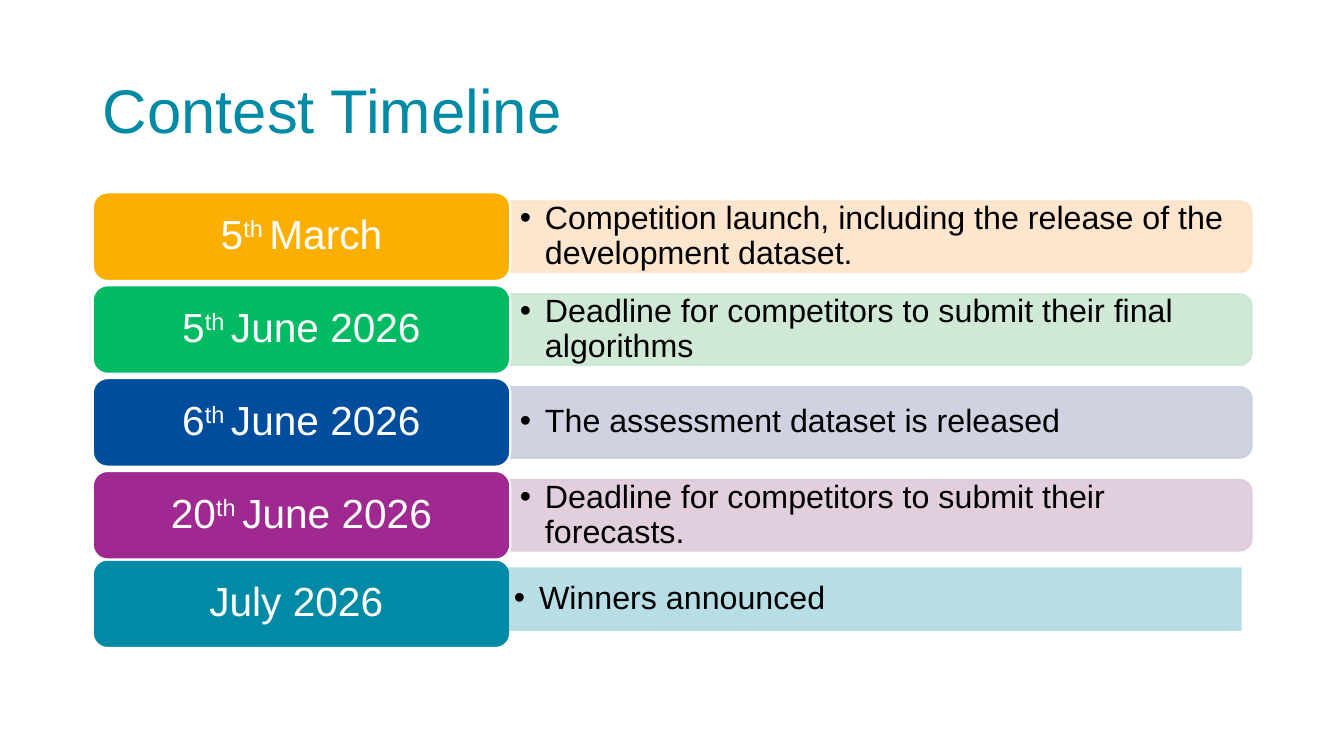
from lxml import etree
from pptx import Presentation
from pptx import util as u
from pptx.dml.color import RGBColor
from pptx.enum import shapes, text
from pptx.oxml.ns import qn

COLOURS = {
    "teal": "008AA5", "amber": "FCAF00", "green": "00BB61", "blue": "004D9E",
    "purple": "A02891", "pale amber": "FEE3C8", "pale green": "CAE7D2",
    "pale blue": "CACFDE", "pale purple": "DFCADB",
    "white": "FFFFFF", "black": "000000",
}
TITLE = "Contest Timeline"
MILESTONES = [
    (("5", "th ", "March"), "amber",
     "Competition launch, including the release of the development dataset."),
    (("5", "th ", "June 2026"), "green",
     "Deadline for competitors to submit their final algorithms"),
    (("6", "th ", "June 2026"), "blue", "The assessment dataset is released"),
    (("20", "th ", "June 2026"), "purple",
     "Deadline for competitors to submit their forecasts."),
]
FINAL_DATE, FINAL_EVENT = ("July 2026",), "Winners announced"

LEFT, TOP, PITCH = 2.34, 4.85, 2.34
DATE_WIDTH, DATE_HEIGHT = 10.52, 2.23
BAR_LEFT, BAR_WIDTH, BAR_HEIGHT = 12.85, 18.69, 1.78
EVENT_WIDTH, EVENT_HEIGHT = 18.59, 1.6
FINAL_TOP, FINAL_BAR_LEFT, FINAL_BAR_TOP = 14.1, 12.7, 14.3


def colour(name):
    return RGBColor.from_string(COLOURS[name])


def set_opacity(shape, percent):
    for element in shape._element.spPr.iter(qn("a:srgbClr")):
        etree.SubElement(element, qn("a:alpha")).set("val", str(percent * 1000))


def format_font(font, size, name):
    font.name, font.size, font.color.rgb = "Arial", u.Pt(size), colour(name)


def set_frame(frame, left, right, top):
    frame.word_wrap = True
    frame.auto_size = text.MSO_AUTO_SIZE.NONE
    frame.vertical_anchor = text.MSO_ANCHOR.MIDDLE
    frame.margin_left, frame.margin_right = u.Cm(left), u.Cm(right)
    frame.margin_top = frame.margin_bottom = u.Cm(top)


def add_block(slide, kind, box, fill, line=None):
    shape = slide.shapes.add_shape(kind, *map(u.Cm, box))
    shape.shadow.inherit = False
    shape.fill.solid()
    shape.fill.fore_color.rgb = colour(fill)
    if line:
        shape.line.color.rgb = colour(line)
        shape.line.width = u.Pt(1.5)
    else:
        shape.line.fill.background()
    return shape


def add_date(slide, top, parts, fill, margins=(0.43, 0.43)):
    box = LEFT, top, DATE_WIDTH, DATE_HEIGHT
    shape = add_block(slide, shapes.MSO_SHAPE.ROUNDED_RECTANGLE, box, fill, "white")
    set_frame(shape.text_frame, *margins, 0.26)
    paragraph = shape.text_frame.paragraphs[0]
    paragraph.alignment = text.PP_ALIGN.CENTER
    paragraph.line_spacing = 0.9
    for index, part in enumerate(parts):
        run = paragraph.add_run()
        run.text = part
        format_font(run.font, 29, "white")
        if index == 1:
            run._r.get_or_add_rPr().set("baseline", "30000")


def write_event(shape, event):
    set_frame(shape.text_frame, 0.25, 0.25, 0.13)
    shape.text_frame.text = event
    paragraph = shape.text_frame.paragraphs[0]
    paragraph.alignment = text.PP_ALIGN.LEFT
    paragraph.line_spacing = 0.9
    properties = paragraph._p.get_or_add_pPr()
    properties.set("marL", "228600")
    properties.set("indent", "-228600")
    etree.SubElement(properties, qn("a:buFont")).set("typeface", "Arial")
    etree.SubElement(properties, qn("a:buChar")).set("char", "•")
    format_font(paragraph.runs[0].font, 23, "black")


def add_bar(slide, middle, fill):
    centre = BAR_LEFT + BAR_WIDTH / 2
    box = centre - BAR_HEIGHT / 2, middle - BAR_WIDTH / 2, BAR_HEIGHT, BAR_WIDTH
    bar = add_block(slide, shapes.MSO_SHAPE.ROUND_2_SAME_RECTANGLE, box, fill, fill)
    bar.rotation = 90
    set_opacity(bar, 90)


def add_title(slide):
    title = slide.shapes.title
    title.left, title.top, title.width, title.height = map(
        u.Cm, (LEFT, 1.02, 29.21, 3.68))
    title.text_frame.text = TITLE
    set_frame(title.text_frame, 0.25, 0.25, 0.13)
    paragraph = title.text_frame.paragraphs[0]
    paragraph.alignment = text.PP_ALIGN.LEFT
    paragraph.line_spacing = 0.9
    format_font(paragraph.runs[0].font, 44, "teal")


def main():
    presentation = Presentation()
    presentation.slide_width, presentation.slide_height = u.Cm(33.87), u.Cm(19.05)
    slide = presentation.slides.add_slide(presentation.slide_layouts[5])
    add_title(slide)

    add_date(slide, FINAL_TOP, FINAL_DATE, "teal", (0.3, 0.56))
    for row, (date, name, event) in enumerate(MILESTONES):
        top = TOP + row * PITCH
        middle = top + DATE_HEIGHT / 2
        add_bar(slide, middle, "pale " + name)
        event_box = BAR_LEFT, middle - EVENT_HEIGHT / 2, EVENT_WIDTH, EVENT_HEIGHT
        write_event(slide.shapes.add_textbox(*map(u.Cm, event_box)), event)
        add_date(slide, top, date, name)

    final_box = FINAL_BAR_LEFT, FINAL_BAR_TOP, EVENT_WIDTH, EVENT_HEIGHT
    final_bar = add_block(slide, shapes.MSO_SHAPE.RECTANGLE, final_box, "teal")
    set_opacity(final_bar, 28)
    write_event(final_bar, FINAL_EVENT)
    presentation.save("out.pptx")


if __name__ == "__main__":
    main()
